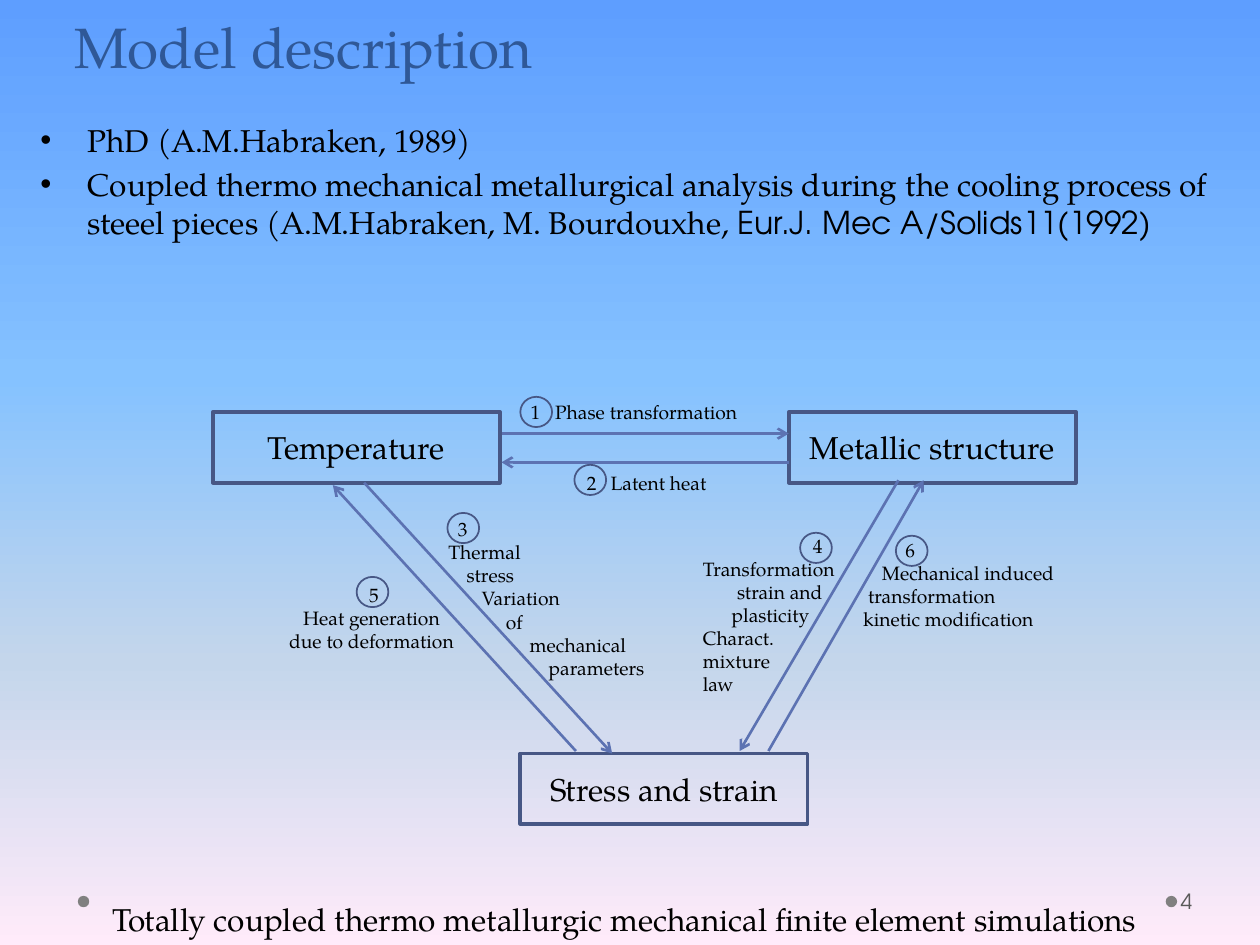
import pptx
import pptx.util
import pptx.dml.color
import pptx.enum.shapes
import pptx.enum.text
import pptx.oxml
import pptx.oxml.ns
import lxml.etree

Cm = pptx.util.Cm
Pt = pptx.util.Pt
qn = pptx.oxml.ns.qn
ALIGN = pptx.enum.text.PP_ALIGN
ANCHOR = pptx.enum.text.MSO_ANCHOR
SHAPE = pptx.enum.shapes.MSO_SHAPE

SERIF = "TeX Gyre Pagella"
SANS = "TeX Gyre Adventor"
COLORS = {
    "title": "2F5897", "text": "000000", "number": "595959",
    "dot": "808080", "outline": "475785", "arrow": "5C72B2",
}
BACKGROUND = [(0, "5E9EFF"), (40, "85C2FF"), (70, "C4D6EB"), (100, "FFEBFA")]

TITLE = "Model description"
REFERENCES = [
    [("PhD (A.M.Habraken, 1989)", SERIF)],
    [("Coupled thermo mechanical metallurgical analysis during the cooling process of "
      "steeel pieces (A.M.Habraken, M. Bourdouxhe, ", SERIF),
     ("Eur.J. Mec A/Solids11(1992)", SANS)],
]
CONCLUSION = "Totally coupled thermo metallurgic mechanical finite element simulations"
PAGE_NUMBER = "4"

BOX_SIZE = (5.79, 1.42)
BOXES = [
    ("Temperature", 4.29, 8.31),
    ("Metallic structure", 15.9, 8.31),
    ("Stress and strain", 10.49, 15.19),
]
ARROWS = [
    ((10.11, 8.74), (15.9, 8.74)),
    ((15.9, 9.32), (10.11, 9.32)),
    ((7.34, 9.73), (12.34, 15.19)),
    ((11.61, 15.14), (6.71, 9.78)),
    ((18.11, 9.68), (14.91, 15.14)),
    ((15.49, 15.14), (18.62, 9.68)),
]
CIRCLE_SIZE = (0.64, 0.61)
DOT_SIZE = (0.23, 0.23)
DOTS = [(23.5, 18.06), (1.57, 18.06)]

# fmt: off
LABELS = [
    {"circle": (10.49, 8), "area": (10.06, 7.95, 5.38, 0.71), "align": ALIGN.LEFT,
     "lines": [("1\tPhase transformation", 0.88, -0.49)]},
    {"circle": (11.58, 9.37), "area": (10.39, 9.37, 5.21, 0.71), "align": ALIGN.LEFT,
     "lines": [("2\tLatent heat", 1.67, -0.48)]},
    {"circle": (9.02, 10.34), "area": (8.79, 10.08, 4.98, 3.96), "align": ALIGN.LEFT,
     "lines": [("3", 0.19, 0), ("Thermal", 0, 0), ("stress", 0.37, 0),
               ("Variation", 0.67, 0), ("of", 1.16, 0),
               ("mechanical", 1.64, 0), ("parameters", 2.02, 0)]},
    {"circle": (16.13, 10.74), "area": (13.92, 10.64, 4.72, 3.51), "align": ALIGN.LEFT,
     "lines": [("4", 2.22, 0), ("Transformation", 0, 0), ("strain and", 0.69, 0),
               ("plasticity", 0.58, 0), ("Charact.", 0, 0),
               ("mixture", 0, 0), ("law", 0, 0)]},
    {"circle": (7.19, 11.63), "area": (5.13, 11.35, 4.72, 2.21), "align": ALIGN.CENTER,
     "lines": [("5", 0.1, 0), ("Heat generation", 0, 0), ("due to deformation", 0, 0)]},
    {"circle": (18.06, 10.8), "area": (17.15, 10.11, 6.88, 3.35), "align": ALIGN.LEFT,
     "lines": [("6", 0.85, 0), ("Mechanical induced", 0.38, 0),
               ("transformation", 0.1, 0), ("kinetic modification", 0, 0)]},
]
# fmt: on


def rgb(name):
    return pptx.dml.color.RGBColor.from_string(COLORS[name])


def add_span(para, text, size, font=SERIF, color="text"):
    span = para.add_run()
    span.text = text
    span.font.size = Pt(size)
    span.font.name = font
    span.font.color.rgb = rgb(color)


def set_indent(para, left, first):
    properties = para._p.get_or_add_pPr()
    properties.set("marL", str(Cm(left)))
    properties.set("indent", str(Cm(first)))


def next_para(frame, index):
    return frame.add_paragraph() if index else frame.paragraphs[0]


def move(shape, left, top, width, height):
    shape.left, shape.top = Cm(left), Cm(top)
    shape.width, shape.height = Cm(width), Cm(height)


def add_text_area(page, area, anchor=ANCHOR.MIDDLE):
    frame = page.shapes.add_textbox(*map(Cm, area)).text_frame
    frame.word_wrap = True
    frame.vertical_anchor = anchor
    return frame


def add_outline(page, kind, place, size, width):
    shape = page.shapes.add_shape(kind, *map(Cm, place + size))
    shape.shadow.inherit = False
    shape.fill.background()
    shape.line.color.rgb = rgb("outline")
    shape.line.width = Pt(width)
    return shape


def paint_background(page):
    fill = page.background.fill
    fill.gradient()
    fill.gradient_angle = 270
    stops = page.element.find(".//" + qn("a:gsLst"))
    for stop in list(stops):
        stops.remove(stop)
    for position, color in BACKGROUND:
        stop = lxml.etree.SubElement(stops, qn("a:gs"), pos=str(position * 1000))
        lxml.etree.SubElement(stop, qn("a:srgbClr"), val=color)


def fill_placeholders(page):
    title = page.shapes.title
    move(title, 1.24, 0.23, 22.86, 1.52)
    frame = title.text_frame
    frame.auto_size = pptx.enum.text.MSO_AUTO_SIZE.NONE
    frame.vertical_anchor = ANCHOR.BOTTOM
    para = frame.paragraphs[0]
    para.alignment = ALIGN.LEFT
    para.line_spacing = 0.9
    add_span(para, TITLE, 32.4, color="title")

    body = page.placeholders[1]
    move(body, 0.56, 2.31, 24.84, 12.57)
    body.text_frame.auto_size = pptx.enum.text.MSO_AUTO_SIZE.NONE
    for index, spans in enumerate(REFERENCES):
        para = next_para(body.text_frame, index)
        set_indent(para, 0.95, -0.95)
        for text, font in spans:
            add_span(para, text, 18, font)


def add_arrow(page, start, end):
    arrow = page.shapes.add_connector(
        pptx.enum.shapes.MSO_CONNECTOR.STRAIGHT, *map(Cm, start + end))
    arrow.line.color.rgb = rgb("arrow")
    arrow.line.width = Pt(1.5)
    lxml.etree.SubElement(arrow.line._get_or_add_ln(), qn("a:tailEnd"), type="arrow")
    lxml.etree.SubElement(arrow._element.spPr, qn("a:effectLst"))


def add_label(page, label):
    add_outline(page, SHAPE.OVAL, label["circle"], CIRCLE_SIZE, 1)
    frame = add_text_area(page, label["area"])
    for index, (text, left, first) in enumerate(label["lines"]):
        para = next_para(frame, index)
        para.alignment = label["align"]
        set_indent(para, left, first)
        add_span(para, text, 11)


def add_footer(page):
    for place in DOTS:
        dot = add_outline(page, SHAPE.OVAL, place, DOT_SIZE, 1)
        dot.fill.solid()
        dot.fill.fore_color.rgb = rgb("dot")
        dot.line.fill.background()
    frame = add_text_area(page, (23.72, 17.65, 1.55, 1.02))
    frame.margin_left = Cm(0.08)
    frame.margin_right = Cm(0.13)
    add_span(frame.paragraphs[0], PAGE_NUMBER, 12, SANS, "number")
    frame = add_text_area(page, (0.89, 17.63, 23.9, 1.42), ANCHOR.TOP)
    frame.auto_size = pptx.enum.text.MSO_AUTO_SIZE.SHAPE_TO_FIT_TEXT
    para = frame.paragraphs[0]
    para.line_spacing = 1.5
    set_indent(para, 1.12, 0)
    add_span(para, CONCLUSION, 18)


def main():
    deck = pptx.Presentation()
    deck.slide_width, deck.slide_height = Cm(25.4), Cm(19.05)
    page = deck.slides.add_slide(deck.slide_layouts[1])
    paint_background(page)
    fill_placeholders(page)
    for text, left, top in BOXES:
        box = add_outline(page, SHAPE.RECTANGLE, (left, top), BOX_SIZE, 2.25)
        box.text_frame.vertical_anchor = ANCHOR.MIDDLE
        para = box.text_frame.paragraphs[0]
        para.alignment = ALIGN.CENTER
        add_span(para, text, 18)
    for start, end in ARROWS:
        add_arrow(page, start, end)
    for label in LABELS:
        add_label(page, label)
    add_footer(page)
    deck.save("out.pptx")


if __name__ == "__main__":
    main()
